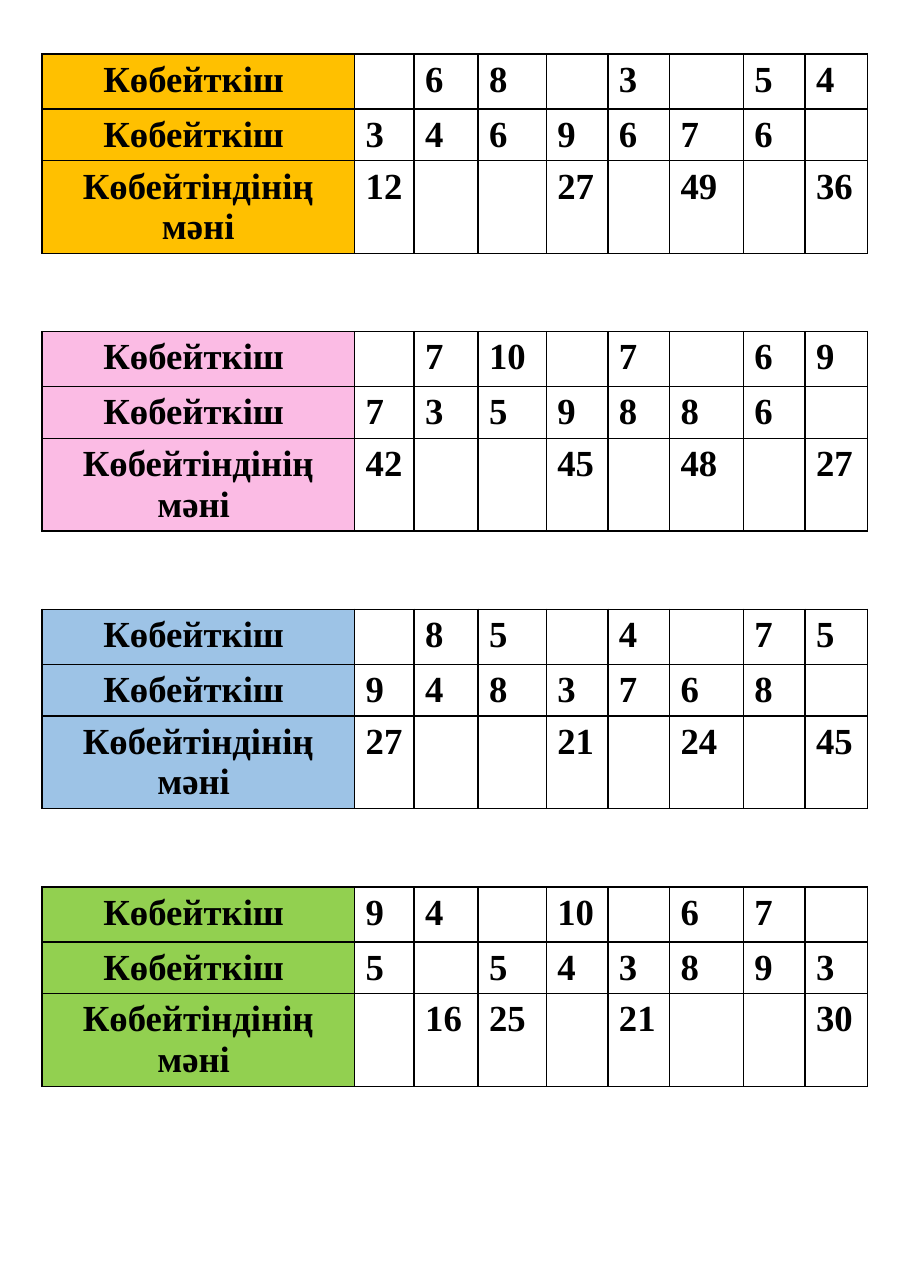
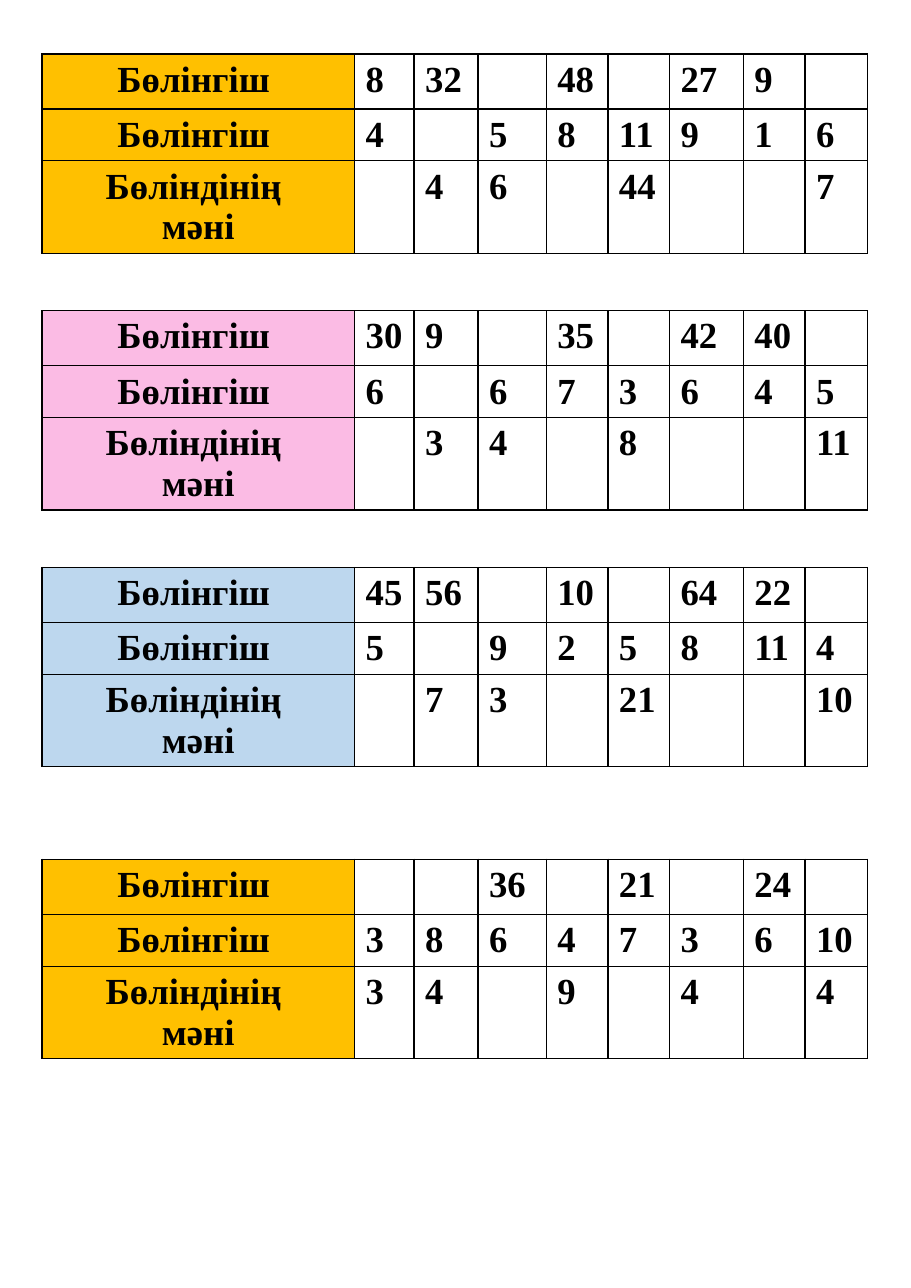
from dataclasses import dataclass
from itertools import product

from lxml import etree
from pptx import Presentation
from pptx.dml.color import RGBColor
from pptx.enum.text import PP_ALIGN
from pptx.oxml.ns import qn
from pptx.util import Inches, Pt

LEFT, MID = PP_ALIGN.LEFT, PP_ALIGN.CENTER
BLANK = 6


@dataclass(frozen=True)
class Theme:
    font: str = "Times New Roman"
    size: int = 24
    ink: str = "000000"
    rule: int = 1
    gold: str = "FFC000"
    pink: str = "FBBBE4"
    blue: str = "9DC3E6"
    pale: str = "BDD7EE"
    green: str = "92D050"


THEME = Theme()

# Page and table grid, in inches
WIDTH, HEIGHT = 8.27, 11.69
EDGE, TOP = 0.38, 0.49
COLS = (2.84, 0.54, 0.58, 0.62, 0.56, 0.56, 0.67, 0.56, 0.57)
ROWS = (0.5, 0.47, 0.84)

# Row labels; the closing space is part of the centred line
TIMES = ("Көбейткіш ", "Көбейткіш ", "Көбейтіндінің мәні ")
SHARE = ("Бөлінгіш ", "Бөлінгіш ", "Бөліндінің \nмәні")

# Each table: fill, then three rows of numbers, with "_" for a blank to fill in
TIMES_SETS = (
    (THEME.gold, "_ 6 8 _ 3 _ 5 4", "3 4 6 9 6 7 6 _", "12 _ _ 27 _ 49 _ 36"),
    (THEME.pink, "_ 7 10 _ 7 _ 6 9", "7 3 5 9 8 8 6 _", "42 _ _ 45 _ 48 _ 27"),
    (THEME.blue, "_ 8 5 _ 4 _ 7 5", "9 4 8 3 7 6 8 _", "27 _ _ 21 _ 24 _ 45"),
    (THEME.green, "9 4 _ 10 _ 6 7 _", "5 _ 5 4 3 8 9 3", "_ 16 25 _ 21 _ _ 30"),
)
SHARE_SETS = (
    (THEME.gold, "8 32 _ 48 _ 27 9 _", "4 _ 5 8 11 9 1 6", "_ 4 6 _ 44 _ _ 7"),
    (THEME.pink, "30 9 _ 35 _ 42 40 _", "6 _ 6 7 3 6 4 5", "_ 3 4 _ 8 _ _ 11"),
    (THEME.pale, "45 56 _ 10 _ 64 22 _", "5 _ 9 2 5 8 11 4", "_ 7 3 _ 21 _ _ 10"),
    (THEME.gold, "_ _ 36 _ 21 _ 24 _", "3 8 6 4 7 3 6 10", "3 4 _ 9 _ 4 _ 4"),
)


def put_text(frame, text, align=LEFT, size=THEME.size, color=THEME.ink, bold=True):
    """Write one paragraph for each line of the text."""
    frame.text = text
    for para in frame.paragraphs:
        para.alignment = align
        font = para.font
        for run in para.runs:
            font = run.font
            font.name, font.size, font.bold = THEME.font, Pt(size), bold
            font.color.rgb = RGBColor.from_string(color)


def rule_cell(cell, color=THEME.ink, width=THEME.rule):
    """Draw the four borders; they stand before the fill in the cell's XML."""
    props = cell._tc.get_or_add_tcPr()
    for spot, side in enumerate(("lnL", "lnR", "lnT", "lnB")):
        line = etree.Element(qn(f"a:{side}"), w=str(Pt(width)))
        fill = etree.SubElement(line, qn("a:solidFill"))
        etree.SubElement(fill, qn("a:srgbClr"), val=color)
        props.insert(spot, line)


def fill_cell(cell, color=None):
    if color:
        cell.fill.solid()
        cell.fill.fore_color.rgb = RGBColor.from_string(color)
    else:
        cell.fill.background()


def add_grid(slide, top, labels, color, *lines):
    """Add one exercise table: a coloured label column and eight numbers."""
    frame = slide.shapes.add_table(
        len(ROWS), len(COLS), Inches(EDGE), Inches(top),
        Inches(sum(COLS)), Inches(sum(ROWS)))
    table = frame.table
    table.first_row = table.horz_banding = False
    for col, width in zip(table.columns, COLS):
        col.width = Inches(width)
    for row, height in zip(table.rows, ROWS):
        row.height = Inches(height)

    texts = [(label, *line.split()) for label, line in zip(labels, lines)]
    for r, c in product(range(len(ROWS)), range(len(COLS))):
        cell, text = table.cell(r, c), texts[r][c]
        head = c == 0
        fill_cell(cell, color if head else None)
        rule_cell(cell)
        if text != "_":
            put_text(cell.text_frame, text, align=MID if head else LEFT)


def add_page(deck, labels, sets, pitch, drop=0):
    """Stack the tables at an equal pitch; drop lowers the last one."""
    slide = deck.slides.add_slide(deck.slide_layouts[BLANK])
    for i, (color, *lines) in enumerate(sets):
        last = i == len(sets) - 1
        names = labels
        if labels is TIMES and i == 0:
            names = [*labels[:2], labels[2].rstrip()]
        add_grid(slide, TOP + i * pitch + drop * last, names, color, *lines)


def main():
    deck = Presentation()
    deck.slide_width, deck.slide_height = Inches(WIDTH), Inches(HEIGHT)
    # Multiplication
    add_page(deck, TIMES, TIMES_SETS, pitch=2.52)
    # Division
    add_page(deck, SHARE, SHARE_SETS, pitch=2.33, drop=0.32)
    deck.save("out.pptx")


if __name__ == "__main__":
    main()
